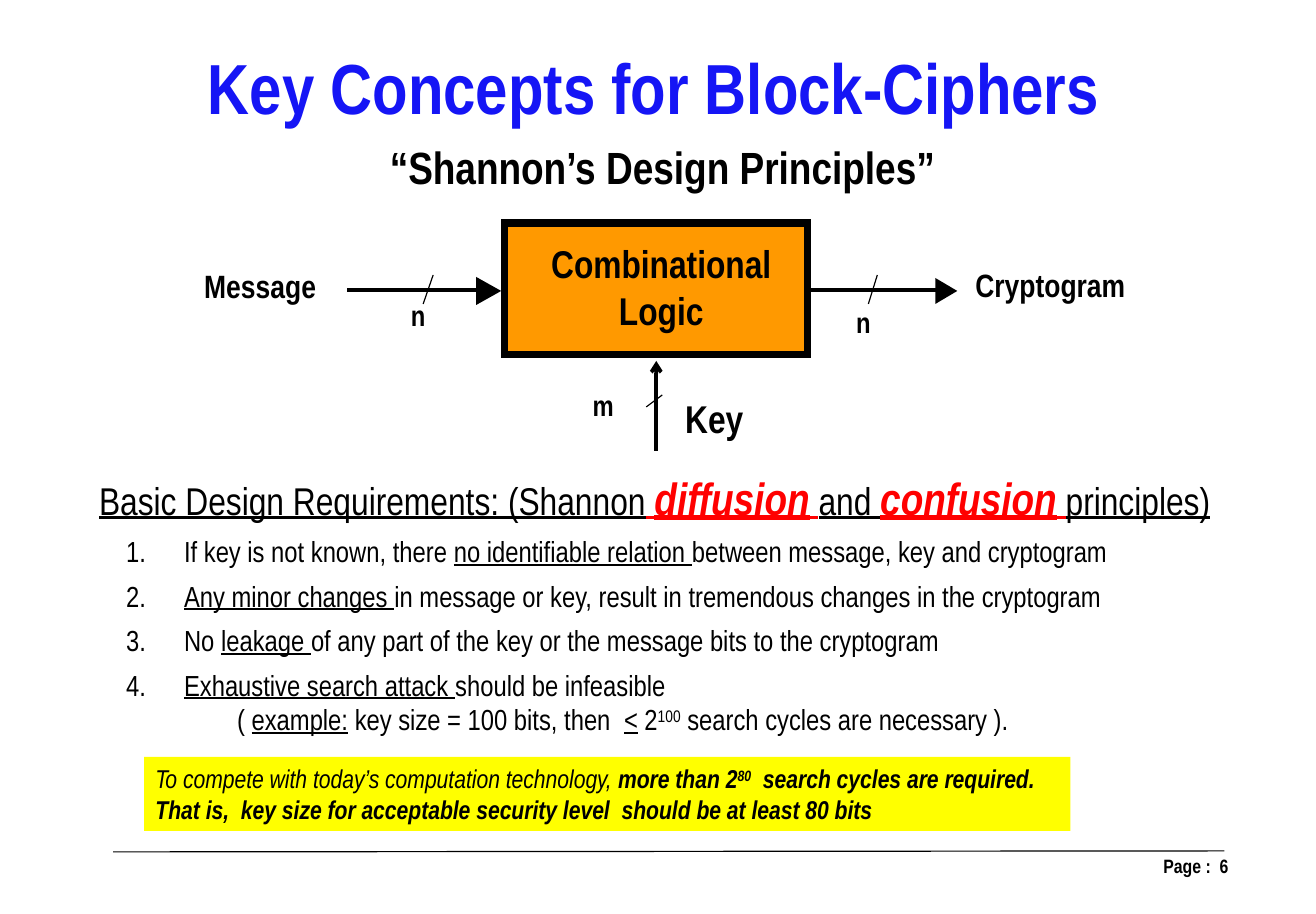
import dataclasses

import lxml.etree
import pptx
import pptx.dml.color
import pptx.enum.shapes
import pptx.enum.text
import pptx.oxml.ns
import pptx.util

EMU_PER_PX = 914400 / 116
ALIGN = pptx.enum.text.PP_ALIGN


@dataclasses.dataclass(frozen=True)
class Theme:
    font: str = "Arial Narrow"
    black: str = "000000"
    blue: str = "1515F5"
    red: str = "FF0000"
    orange: str = "FF9900"
    yellow: str = "FFFF00"
    title: int = 44
    subtitle: int = 28
    heading: int = 24
    end_label: int = 20
    body: int = 18
    note: int = 16
    footer: int = 12


THEME = Theme()

# Each span is its text and style marks:
# b bold, i italic, u underline, r red, ^ superscript, + large
HEADING = [
    ("Basic Design Requirements: (Shannon", "u"), (" ", "ur"),
    ("diffusion", "ubir+"), (" ", "ur"), ("and ", "u"),
    ("confusion", "ubir+"), (" ", "ur"), ("principles)", "u"),
]
REQUIREMENTS = [
    [("If key is not known, there ", ""), ("no identifiable relation ", "u"),
     ("between message, key and cryptogram", "")],
    [("Any minor changes ", "u"),
     ("in message or key, result in tremendous changes in the cryptogram", "")],
    [("No ", ""), ("leakage ", "u"),
     ("of any part of the key or the message bits to the cryptogram", "")],
    [("Exhaustive search attack ", "u"), ("should be infeasible", "")],
]
EXAMPLE = [
    ("( ", ""), ("example:", "u"), (" key size = 100 bits, then  ", ""),
    ("<", "u"), (" 2", ""), ("100", "^"),
    (" search cycles are necessary ).", ""),
]
NOTE = [
    [("To compete with today’s computation technology, ", "i"),
     ("more than 2", "bi"), ("80", "bi^"),
     ("  search cycles are required.", "bi")],
    [("That is,  key size for acceptable security level  "
      "should be at least 80 bits", "bi")],
]


def px(length):
    return pptx.util.Emu(round(length * EMU_PER_PX))


def rgb(color):
    return pptx.dml.color.RGBColor.from_string(color)


def set_font(para, size, color=THEME.black, bold=False):
    para.font.name = THEME.font
    para.font.size = pptx.util.Pt(size)
    para.font.bold = bold
    para.font.color.rgb = rgb(color)


def add_spans(para, spans):
    for text, marks in spans:
        span = para.add_run()
        span.text = text
        if "b" in marks:
            span.font.bold = True
        if "i" in marks:
            span.font.italic = True
        if "u" in marks:
            span.font.underline = True
        if "r" in marks:
            span.font.color.rgb = rgb(THEME.red)
        if "+" in marks:
            span.font.size = pptx.util.Pt(THEME.subtitle)
        if "^" in marks:
            span._r.get_or_add_rPr().set("baseline", "30000")


def add_text_frame(page, left, top, width, height):
    frame = page.shapes.add_textbox(px(left), px(top), px(width), px(height)).text_frame
    frame.word_wrap = True
    frame.margin_left = frame.margin_right = 0
    frame.margin_top = frame.margin_bottom = 0
    return frame


def add_label(page, lines, center, top, width, size, color=THEME.black,
              align=ALIGN.CENTER):
    height = len(lines) * size * 2
    frame = add_text_frame(page, center - width // 2, top, width, height)
    for index, line in enumerate(lines):
        para = frame.add_paragraph() if index else frame.paragraphs[0]
        para.text = line
        para.alignment = align
        set_font(para, size, color, bold=True)


def add_box(page, left, top, width, height, fill, border=0):
    box = page.shapes.add_shape(pptx.enum.shapes.MSO_SHAPE.RECTANGLE,
                                px(left), px(top), px(width), px(height))
    box.shadow.inherit = False
    box.fill.solid()
    box.fill.fore_color.rgb = rgb(fill)
    if border:
        box.line.color.rgb = rgb(THEME.black)
        box.line.width = pptx.util.Pt(border)
        lxml.etree.SubElement(box.line._get_or_add_ln(),
                              pptx.oxml.ns.qn("a:miter"), lim="800000")
    else:
        box.line.fill.background()
    return box


def add_line(page, x1, y1, x2, y2, weight=0.75, arrow=False):
    line = page.shapes.add_connector(pptx.enum.shapes.MSO_CONNECTOR.STRAIGHT,
                                     px(x1), px(y1), px(x2), px(y2))
    line.line.color.rgb = rgb(THEME.black)
    line.line.width = pptx.util.Pt(weight)
    if arrow:
        lxml.etree.SubElement(line.line._get_or_add_ln(),
                              pptx.oxml.ns.qn("a:tailEnd"), type="arrow")
    lxml.etree.SubElement(line._element.spPr, pptx.oxml.ns.qn("a:effectLst"))


def add_block_arrow(page, start, neck, tip, half_height, middle=290):
    add_line(page, start, middle, neck + 3, middle, weight=2.25)
    outline = page.shapes.build_freeform(px(tip), px(middle + 1), scale=1.0)
    outline.add_line_segments([(px(neck), px(middle + 1 - half_height)),
                               (px(neck), px(middle + 1 + half_height))], close=True)
    head = outline.convert_to_shape()
    head.shadow.inherit = False
    head.fill.solid()
    head.fill.fore_color.rgb = rgb(THEME.black)
    head.line.fill.background()


def add_item(para, spans, size, margin, indent=0, after=6, numbered=False):
    properties = para._p.get_or_add_pPr()
    properties.set("marL", str(px(margin)))
    properties.set("indent", str(px(indent)))
    if numbered:
        lxml.etree.SubElement(properties, pptx.oxml.ns.qn("a:buAutoNum"),
                              type="arabicPeriod")
    para.space_after = pptx.util.Pt(after)
    set_font(para, size)
    add_spans(para, spans)


def add_requirements(page):
    frame = add_text_frame(page, 99, 470, 1191, 269)
    add_item(frame.paragraphs[0], HEADING, THEME.heading, margin=58, indent=-58)
    for spans in REQUIREMENTS:
        after = 0 if spans is REQUIREMENTS[-1] else 6
        add_item(frame.add_paragraph(), spans, THEME.body, margin=85,
                 indent=-58, after=after, numbered=True)
    add_item(frame.add_paragraph(), EXAMPLE, THEME.body, margin=138)


def add_note(page):
    frame = add_box(page, 144, 757, 926, 74, THEME.yellow).text_frame
    frame.word_wrap = True
    for index, spans in enumerate(NOTE):
        para = frame.add_paragraph() if index else frame.paragraphs[0]
        para.alignment = ALIGN.LEFT
        set_font(para, THEME.note)
        add_spans(para, spans)


def main():
    deck = pptx.Presentation()
    deck.slide_width = pptx.util.Inches(11.34)
    deck.slide_height = pptx.util.Inches(7.88)
    page = deck.slides.add_slide(deck.slide_layouts[6])

    # Titles
    add_label(page, ["Key Concepts for Block-Ciphers"], 654, 44, 924,
              THEME.title, THEME.blue)
    add_label(page, ["“Shannon’s Design Principles”"], 662, 139, 550, THEME.subtitle)

    # Cipher diagram
    add_box(page, 504, 223, 303, 132, THEME.orange, border=4.5)
    add_label(page, ["Combinational", "Logic"], 661, 240, 224, THEME.heading)
    add_block_arrow(page, start=347, neck=476, tip=501, half_height=14)
    add_block_arrow(page, start=807, neck=935, tip=957, half_height=13)
    add_line(page, 656, 451, 656, 361, weight=2.25, arrow=True)
    add_label(page, ["Message"], 260, 266, 126, THEME.end_label)
    add_label(page, ["Cryptogram"], 1050, 265, 152, THEME.end_label)
    add_label(page, ["Key"], 714, 395, 68, THEME.heading)

    # Bus widths with their slashes
    for name, center, top in (("n", 418, 298), ("n", 863, 305), ("m", 603, 388)):
        add_label(page, [name], center, top, 54, THEME.body)
    for slash in ((433, 275, 423, 304), (877, 275, 868, 304), (662, 395, 646, 407)):
        add_line(page, *slash)

    # Requirements and note
    add_requirements(page)
    add_note(page)

    # Footer
    add_line(page, 113, 852, 1224, 851)
    add_label(page, ["Page :  6"], 1128, 854, 200, THEME.footer, align=ALIGN.RIGHT)

    deck.save("out.pptx")


if __name__ == "__main__":
    main()
